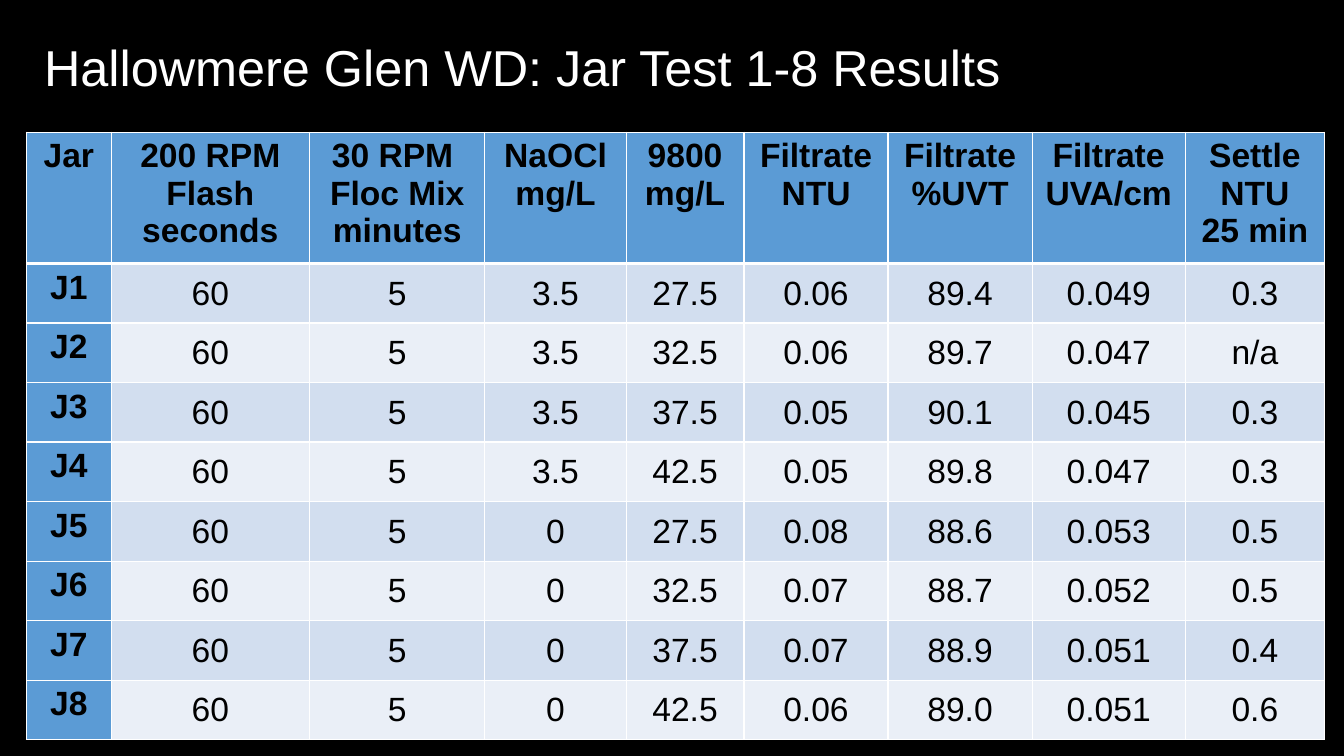
from lxml import etree
from pptx import Presentation
from pptx.dml.color import RGBColor
from pptx.enum.text import MSO_ANCHOR, PP_ALIGN
from pptx.oxml.ns import qn
from pptx.util import Cm, Pt

CENTER = PP_ALIGN.CENTER
TOP = MSO_ANCHOR.TOP
MIDDLE = MSO_ANCHOR.MIDDLE

BLACK = RGBColor(0x00, 0x00, 0x00)
WHITE = RGBColor(0xFF, 0xFF, 0xFF)
BLUE = RGBColor(0x5B, 0x9B, 0xD5)
BANDS = (RGBColor(0xEA, 0xEF, 0xF7), RGBColor(0xD2, 0xDE, 0xEF))

FONT = "Arial"
TITLE = "Hallowmere Glen WD: Jar Test 1-8 Results"
WIDTHS = (2.13, 5.0, 4.42, 3.56, 2.97, 3.63, 3.63, 3.86, 3.51)
HEAD_HEIGHT = 3.07
ROW_HEIGHT = 1.5
HEADS = (
    "Jar", "200 RPM\nFlash\nseconds", "30 RPM \nFloc Mix\nminutes",
    "NaOCl\nmg/L", "9800\nmg/L", "Filtrate\nNTU", "Filtrate\n%UVT",
    "Filtrate\nUVA/cm", "Settle\nNTU\n25 min",
)
JARS = (
    ("J1", "60", "5", "3.5", "27.5", "0.06", "89.4", "0.049", "0.3"),
    ("J2", "60", "5", "3.5", "32.5", "0.06", "89.7", "0.047", "n/a"),
    ("J3", "60", "5", "3.5", "37.5", "0.05", "90.1", "0.045", "0.3"),
    ("J4", "60", "5", "3.5", "42.5", "0.05", "89.8", "0.047", "0.3"),
    ("J5", "60", "5", "0", "27.5", "0.08", "88.6", "0.053", "0.5"),
    ("J6", "60", "5", "0", "32.5", "0.07", "88.7", "0.052", "0.5"),
    ("J7", "60", "5", "0", "37.5", "0.07", "88.9", "0.051", "0.4"),
    ("J8", "60", "5", "0", "42.5", "0.06", "89.0", "0.051", "0.6"),
)


def set_font(para, size, color, bold=False):
    font = para.font
    font.name = FONT
    font.size = Pt(size)
    font.bold = bold
    font.color.rgb = color


def add_title(slide):
    box = slide.shapes.add_textbox(Cm(0.86), Cm(0.23), Cm(32.26), Cm(3.1))
    frame = box.text_frame
    frame.word_wrap = True
    frame.vertical_anchor = MIDDLE
    frame.text = TITLE
    para = frame.paragraphs[0]
    para.line_spacing = 0.9
    set_font(para, 36, WHITE)


def set_edges(cell, top, bottom):
    props = cell._tc.get_or_add_tcPr()
    for side, width in (("L", 1), ("R", 1), ("T", top), ("B", bottom)):
        line = etree.SubElement(props, qn(f"a:ln{side}"), w=str(Pt(width)))
        fill = etree.SubElement(line, qn("a:solidFill"))
        etree.SubElement(fill, qn("a:srgbClr"), val=str(WHITE))


def set_cell(cell, text, row, col):
    label = row == 0 or col == 0
    set_edges(cell, 3 if row == 1 else 1, 3 if row == 0 else 1)
    cell.fill.solid()
    cell.fill.fore_color.rgb = BLUE if label else BANDS[row % 2]
    cell.vertical_anchor = TOP if label else MIDDLE
    cell.margin_left = cell.margin_right = Cm(0.25 if label else 0.02)
    cell.margin_top = Cm(0.13 if label else 0.02)
    cell.margin_bottom = Cm(0.13 if label else 0)
    cell.text = text
    for para in cell.text_frame.paragraphs:
        para.alignment = CENTER
        set_font(para, 24, BLACK, label)


def add_results(slide):
    rows = (HEADS, *JARS)
    height = HEAD_HEIGHT + ROW_HEIGHT * len(JARS)
    table = slide.shapes.add_table(
        len(rows), len(HEADS), Cm(0.67), Cm(3.33), Cm(sum(WIDTHS)), Cm(height)
    ).table
    table.first_col = True
    for col, width in enumerate(WIDTHS):
        table.columns[col].width = Cm(width)
    for row, texts in enumerate(rows):
        table.rows[row].height = Cm(ROW_HEIGHT if row else HEAD_HEIGHT)
        for col, text in enumerate(texts):
            set_cell(table.cell(row, col), text, row, col)


def main():
    deck = Presentation()
    deck.slide_width = Cm(33.87)
    deck.slide_height = Cm(19.05)
    slide = deck.slides.add_slide(deck.slide_layouts[6])
    slide.background.fill.solid()
    slide.background.fill.fore_color.rgb = BLACK
    add_title(slide)
    add_results(slide)
    deck.save("out.pptx")


if __name__ == "__main__":
    main()
